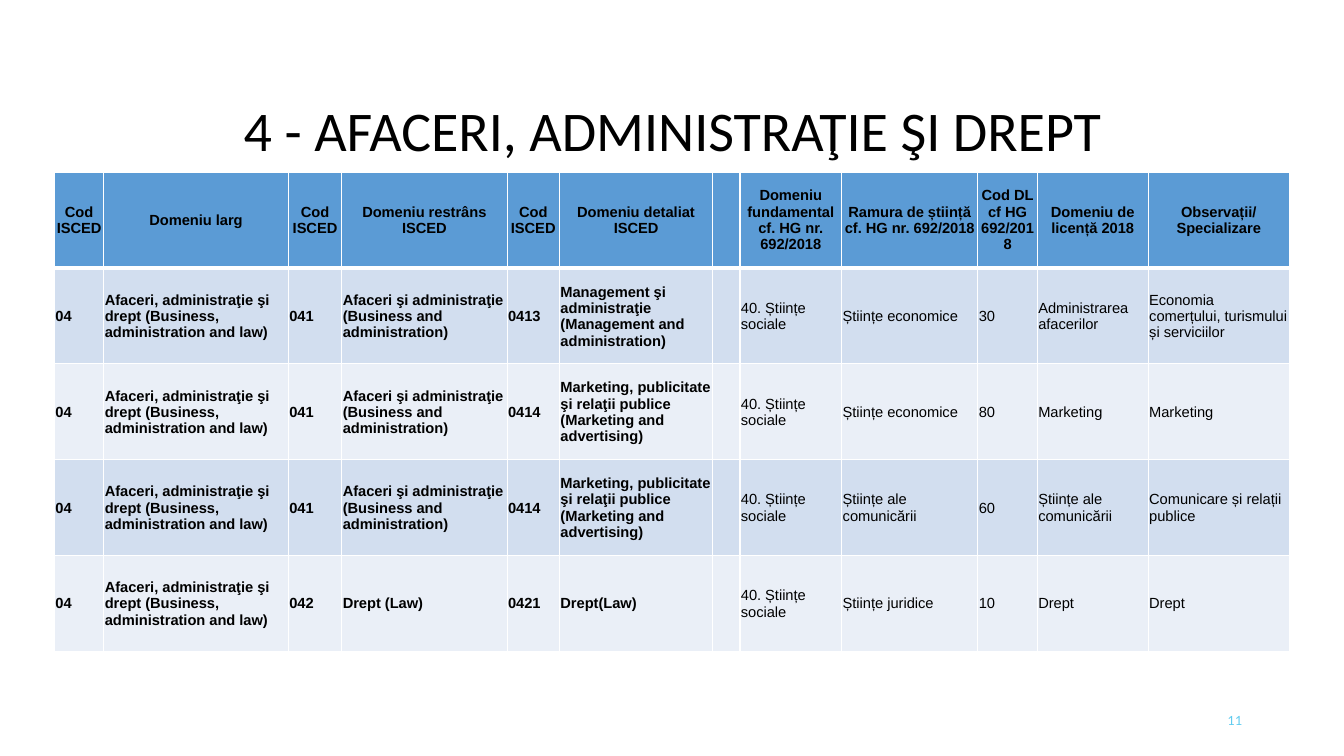
from pptx import Presentation
from pptx.dml.color import RGBColor
from pptx.enum.text import MSO_ANCHOR, MSO_AUTO_SIZE, PP_ALIGN
from pptx.oxml import parse_xml
from pptx.oxml.ns import nsdecls
from pptx.util import Inches, Pt

LEFT, CENTER, RIGHT = PP_ALIGN.LEFT, PP_ALIGN.CENTER, PP_ALIGN.RIGHT
MIDDLE = MSO_ANCHOR.MIDDLE
NO_AUTOFIT = MSO_AUTO_SIZE.NONE

TITLE_ONLY = 5
BLACK, WHITE, CYAN = "000000", "FFFFFF", "5FCBEF"
HEADER_FILL, BAND_FILLS = "5B9BD5", ("D2DEEF", "EAEFF7")

COL_WIDTHS = (0.49, 1.83, 0.53, 1.64, 0.52, 1.52, 0.27, 1.01, 1.35, 0.59, 1.1, 1.4)
ROW_HEIGHT = 0.95
GAP_COL = 6  # the empty column; ISCED columns to its left are bold

HEADERS = ("Cod ISCED", "Domeniu larg", "Cod ISCED", "Domeniu restrâns ISCED",
           "Cod ISCED", "Domeniu detaliat ISCED", "",
           "Domeniu fundamental cf. HG nr. 692/2018",
           "Ramura de știință cf. HG nr. 692/2018", "Cod DL cf HG 692/2018",
           "Domeniu de licență 2018", "Observații/ Specializare")

BROAD = ("04", "Afaceri, administraţie şi drept (Business, administration and law)")
BUSINESS = ("041", "Afaceri şi administraţie (Business and administration)")
LAW = ("042", "Drept (Law)")
MANAGEMENT = ("0413", "Management şi administraţie (Management and administration)")
MARKETING = ("0414", "Marketing, publicitate şi relaţii publice (Marketing and advertising)")
SOCIAL = ("", "40. Științe sociale")

ROWS = (
    BROAD + BUSINESS + MANAGEMENT + SOCIAL
    + ("Științe economice", "30", "Administrarea afacerilor",
       "Economia comerțului, turismului și serviciilor"),
    BROAD + BUSINESS + MARKETING + SOCIAL
    + ("Științe economice", "80", "Marketing", "Marketing"),
    BROAD + BUSINESS + MARKETING + SOCIAL
    + ("Științe ale comunicării", "60", "Științe ale comunicării",
       "Comunicare și relații publice"),
    BROAD + LAW + ("0421", "Drept(Law)") + SOCIAL
    + ("Științe juridice", "10", "Drept", "Drept"),
)


def rgb(color):
    return RGBColor.from_string(color)


def write(tf, text, size=10.5, font="Arial", color=BLACK, bold=False,
          align=LEFT, spacing=None):
    tf.word_wrap = True
    p = tf.paragraphs[0]
    p.alignment = align
    if spacing:
        p.line_spacing = spacing
    r = p.add_run()
    r.text = text
    r.font.size, r.font.name, r.font.bold = Pt(size), font, bold
    r.font.color.rgb = rgb(color)


def add_borders(cell, bottom):
    tc_pr = cell._tc.get_or_add_tcPr()
    for side, width in (("L", 1), ("R", 1), ("T", 1), ("B", bottom)):
        tc_pr.append(parse_xml(
            f'<a:ln{side} {nsdecls("a")} w="{Pt(width)}"><a:solidFill>'
            f'<a:srgbClr val="{WHITE}"/></a:solidFill></a:ln{side}>'))


def format_cell(cell, text, fill, inset=0.01, bottom=1, **text_format):
    add_borders(cell, bottom)
    cell.fill.solid()
    cell.fill.fore_color.rgb = rgb(fill)
    cell.vertical_anchor = MIDDLE
    cell.margin_left = cell.margin_right = cell.margin_top = Inches(inset)
    cell.margin_bottom = Inches(0)
    if text:
        write(cell.text_frame, text, **text_format)


def add_title(slide, text):
    title = slide.shapes.title
    title.left, title.top = Inches(0.92), Inches(0.96)
    title.width, title.height = Inches(11.5), Inches(0.72)
    tf = title.text_frame
    tf.auto_size = NO_AUTOFIT
    tf.vertical_anchor = MIDDLE
    write(tf, text, size=40, font="Calibri", align=CENTER, spacing=0.9)


def add_domain_table(slide):
    table = slide.shapes.add_table(
        len(ROWS) + 1, len(HEADERS), Inches(0.54), Inches(1.71),
        Inches(sum(COL_WIDTHS)), Inches(ROW_HEIGHT * (len(ROWS) + 1))).table
    for column, width in zip(table.columns, COL_WIDTHS):
        column.width = Inches(width)
    for row in table.rows:
        row.height = Inches(ROW_HEIGHT)
    # Header row
    for c, text in enumerate(HEADERS):
        format_cell(table.cell(0, c), text, HEADER_FILL, inset=0, bottom=3,
                    bold=True, align=CENTER)
    # Banded body rows
    for r, values in enumerate(ROWS):
        for c, text in enumerate(values):
            format_cell(table.cell(r + 1, c), text, BAND_FILLS[r % 2],
                        bold=c < GAP_COL)


def add_page_number(slide, number):
    box = slide.shapes.add_textbox(Inches(9.42), Inches(6.95), Inches(3), Inches(0.4))
    box.text_frame.vertical_anchor = MIDDLE
    write(box.text_frame, number, size=9, font="Lato", color=CYAN, align=RIGHT)


def main():
    prs = Presentation()
    prs.slide_width, prs.slide_height = Inches(13.33), Inches(7.5)
    slide = prs.slides.add_slide(prs.slide_layouts[TITLE_ONLY])
    add_domain_table(slide)
    add_page_number(slide, "11")
    add_title(slide, "4 - AFACERI, ADMINISTRAŢIE ŞI DREPT")
    prs.save("out.pptx")


if __name__ == "__main__":
    main()
